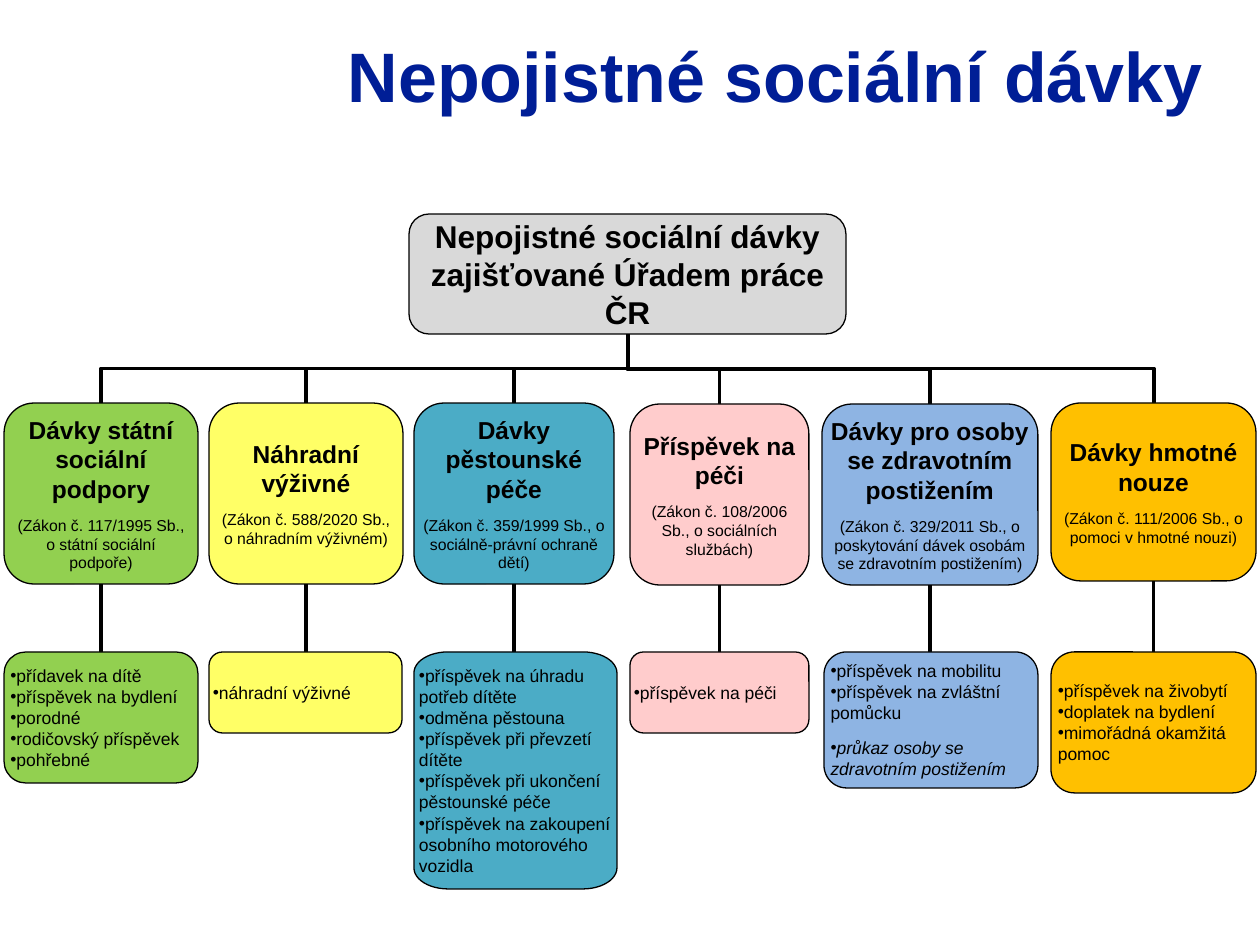
import math
from dataclasses import dataclass

import pptx
import pptx.util
from lxml import etree
from pptx.dml.color import RGBColor
from pptx.enum.shapes import MSO_CONNECTOR, MSO_SHAPE
from pptx.enum.text import MSO_ANCHOR, PP_ALIGN
from pptx.oxml.ns import qn

# Content
TITLE = "Nepojistné sociální dávky"
ROOT = "Nepojistné sociální dávky zajišťované Úřadem práce ČR"
# head box, leaf box (left, width, height), fill, heading, law, benefits
BRANCHES = [
    ((4, 403, 194, 181), (4, 194, 131), "92D050", "Dávky státní sociální podpory",
     "(Zákon č. 117/1995 Sb., o státní sociální podpoře)",
     ["přídavek na dítě", "příspěvek na bydlení", "porodné",
      "rodičovský příspěvek", "pohřebné"]),
    ((209, 403, 194, 181), (209, 193, 81), "FFFF66", "Náhradní výživné",
     "(Zákon č. 588/2020 Sb., o náhradním výživném)",
     ["náhradní výživné"]),
    ((414, 403, 200, 181), (414, 203, 237), "4BACC6", "Dávky pěstounské péče",
     "(Zákon č. 359/1999 Sb., o sociálně-právní ochraně dětí)",
     ["příspěvek na úhradu potřeb dítěte", "odměna pěstouna",
      "příspěvek při převzetí dítěte",
      "příspěvek při ukončení pěstounské péče",
      "příspěvek na zakoupení osobního motorového vozidla"]),
    ((630, 404, 179, 181), (630, 179, 81), "FFCCCC", "Příspěvek na péči",
     "(Zákon č. 108/2006 Sb., o sociálních službách)",
     ["příspěvek na péči"]),
    ((822, 404, 216, 181), (824, 214, 136), "8EB4E3",
     "Dávky pro osoby se zdravotním postižením",
     "(Zákon č. 329/2011 Sb., o poskytování dávek osobám se zdravotním postižením)",
     ["příspěvek na mobilitu", "příspěvek na zvláštní pomůcku",
      "průkaz osoby se zdravotním postižením"]),
    ((1051, 403, 205, 178), (1051, 205, 141), "FFC000", "Dávky hmotné nouze",
     "(Zákon č. 111/2006 Sb., o pomoci v hmotné nouzi)",
     ["příspěvek na živobytí", "doplatek na bydlení", "mimořádná okamžitá pomoc"]),
]
ITALIC = {"průkaz osoby se zdravotním postižením"}
OVAL_CORNERED = "Dávky pěstounské péče"


@dataclass(frozen=True)
class Theme:
    font: str = "Arial"
    title_color: str = "001E96"
    ink: str = "000000"
    root_fill: str = "D9D9D9"
    title: int = 40
    root: int = 18
    head: int = 14
    law: int = 9
    item: int = 10
    gap: int = 7
    outline: float = 0.75
    link: float = 2.25


T = Theme()

# Layout in px, 126 to the inch
ROOT_BOX = (409, 214, 437, 120)
LEAF_TOP = 652
ROOT_X = ROOT_BOX[0] + ROOT_BOX[2] / 2
ROOT_BOTTOM = ROOT_BOX[1] + ROOT_BOX[3]


def px(n):
    return pptx.util.Emu(round(n * 914400 / 126))


prs = pptx.Presentation()
prs.slide_width, prs.slide_height = px(1260), px(945)
s = prs.slides.add_slide(prs.slide_layouts[6])


def add_text(p, text, size, color=T.ink, bold=False, italic=False):
    r = p.add_run()
    r.text = text
    f = r.font
    f.name, f.size, f.bold, f.italic = T.font, pptx.util.Pt(size), bold, italic
    f.color.rgb = RGBColor.from_string(color)


def next_paragraph(tf, first):
    return tf.paragraphs[0] if first else tf.add_paragraph()


def link(kind, x1, y1, x2, y2):
    c = s.shapes.add_connector(kind, px(x1), px(y1), px(x2), px(y2))
    c.line.width = pptx.util.Pt(T.link)
    c.line.color.rgb = RGBColor.from_string(T.ink)
    etree.SubElement(c._element.spPr, qn("a:effectLst"))
    return c


def elbow_down(x1, y1, x2, y2):
    """Elbow that leaves and arrives vertically: a turned horizontal one."""
    cx, cy = (x1 + x2) / 2, (y1 + y2) / 2
    half_w, half_h = (y2 - y1) / 2, abs(x2 - x1) / 2
    side = 1 if x2 > x1 else -1
    c = link(MSO_CONNECTOR.ELBOW, cx + side * half_w, cy - half_h,
             cx - side * half_w, cy + half_h)
    degrees = 270 if side > 0 else 90
    c._element.spPr.find(qn("a:xfrm")).set("rot", str(degrees * 60000))


def style_box(sp, fill):
    sp.shadow.inherit = False
    sp.fill.solid()
    sp.fill.fore_color.rgb = RGBColor.from_string(fill)
    sp.line.color.rgb = RGBColor.from_string(T.ink)
    sp.line.width = pptx.util.Pt(T.outline)
    tf = sp.text_frame
    tf.word_wrap = True
    tf.vertical_anchor = MSO_ANCHOR.MIDDLE
    tf.margin_left = tf.margin_right = tf.margin_top = tf.margin_bottom = 0
    return tf


def round_box(x, y, w, h, fill):
    sp = s.shapes.add_shape(MSO_SHAPE.ROUNDED_RECTANGLE, px(x), px(y), px(w), px(h))
    return style_box(sp, fill)


def oval_box(x, y, w, h, fill, rx=34, ry=21, steps=12):
    """Box whose corners are quarter ellipses."""
    centres = [(x + w - rx, y + h - ry), (x + rx, y + h - ry),
               (x + rx, y + ry), (x + w - rx, y + ry)]
    points = []
    for quarter, (cx, cy) in enumerate(centres):
        for i in range(steps + 1):
            a = math.pi / 2 * (quarter + i / steps)
            points.append((px(cx + rx * math.cos(a)), px(cy + ry * math.sin(a))))
    fb = s.shapes.build_freeform(*points[0])
    fb.add_line_segments(points[1:], close=True)
    return style_box(fb.convert_to_shape(), fill)


def add_items(tf, items, indent):
    for i, item in enumerate(items):
        p = next_paragraph(tf, i == 0)
        pPr = p._p.get_or_add_pPr()
        pPr.set("marL", str(indent))
        pPr.set("indent", "0")
        etree.SubElement(pPr, qn("a:buFont")).set("typeface", T.font)
        etree.SubElement(pPr, qn("a:buChar")).set("char", "•")
        p.alignment = PP_ALIGN.LEFT
        if item in ITALIC:
            p.space_before = pptx.util.Pt(T.gap + 1)
        add_text(p, item, T.item, italic=item in ITALIC)


# Title
tf = s.shapes.add_textbox(px(302), px(26), px(913), px(189)).text_frame
tf.word_wrap = True
tf.margin_top = px(7)
tf.paragraphs[0].alignment = PP_ALIGN.RIGHT
add_text(tf.paragraphs[0], TITLE, T.title, T.title_color, bold=True)

# Links, behind the boxes
for i, ((x, y, w, h), *_) in enumerate(BRANCHES):
    mid = x + w / 2
    link(MSO_CONNECTOR.STRAIGHT, mid, y + h, mid, LEAF_TOP)
    if i == 1:
        link(MSO_CONNECTOR.STRAIGHT, mid, (ROOT_BOTTOM + y) / 2, mid, y)
    else:
        elbow_down(ROOT_X, ROOT_BOTTOM, mid, y)

# Root
tf = round_box(*ROOT_BOX, T.root_fill)
tf.paragraphs[0].alignment = PP_ALIGN.CENTER
add_text(tf.paragraphs[0], ROOT, T.root, bold=True)

# Branch heads and their benefits
for head, (leaf_x, leaf_w, leaf_h), fill, heading, law, items in BRANCHES:
    tf = round_box(*head, fill)
    for i, (text, size) in enumerate([(heading, T.head), (law, T.law)]):
        p = next_paragraph(tf, i == 0)
        p.alignment = PP_ALIGN.CENTER
        if i:
            p.space_before = pptx.util.Pt(T.gap)
        add_text(p, text, size, bold=i == 0)

    oval = heading == OVAL_CORNERED
    make_box = oval_box if oval else round_box
    add_items(make_box(leaf_x, LEAF_TOP, leaf_w, leaf_h, fill), items,
              px(5) if oval else 0)

prs.save("out.pptx")
